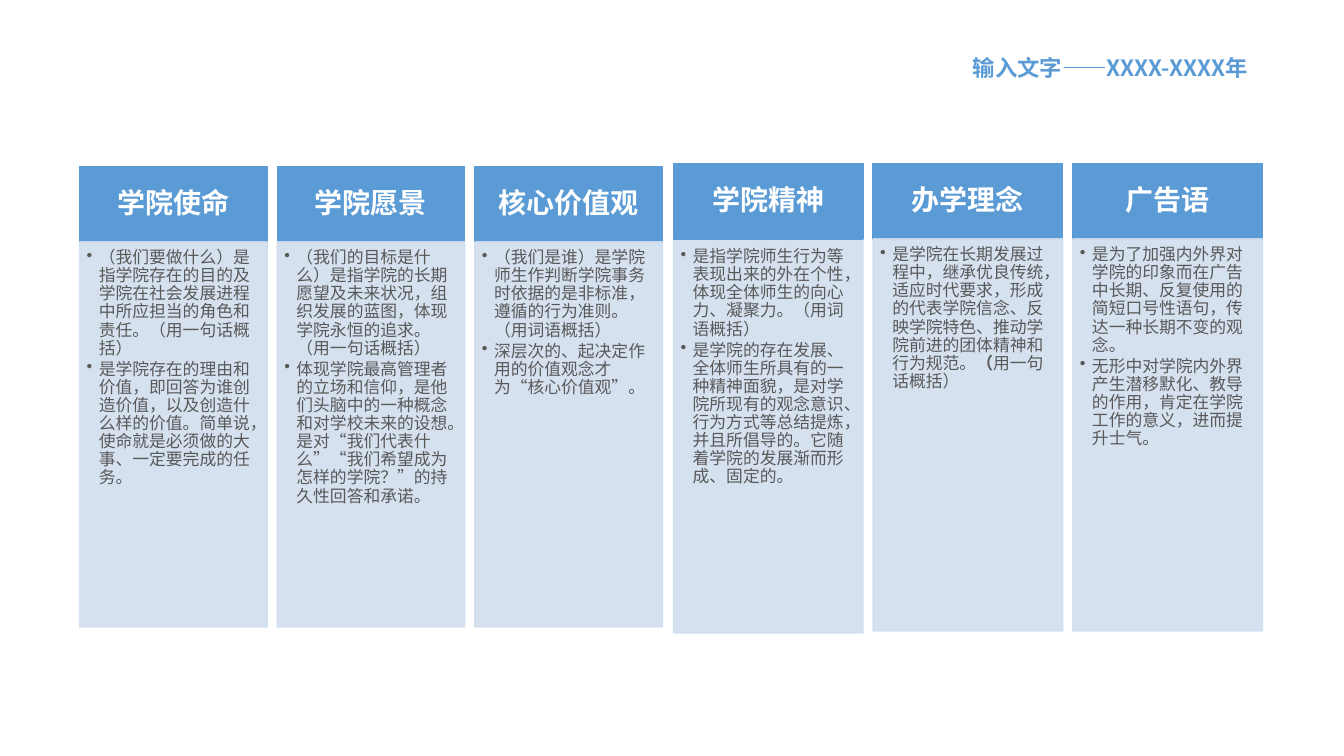
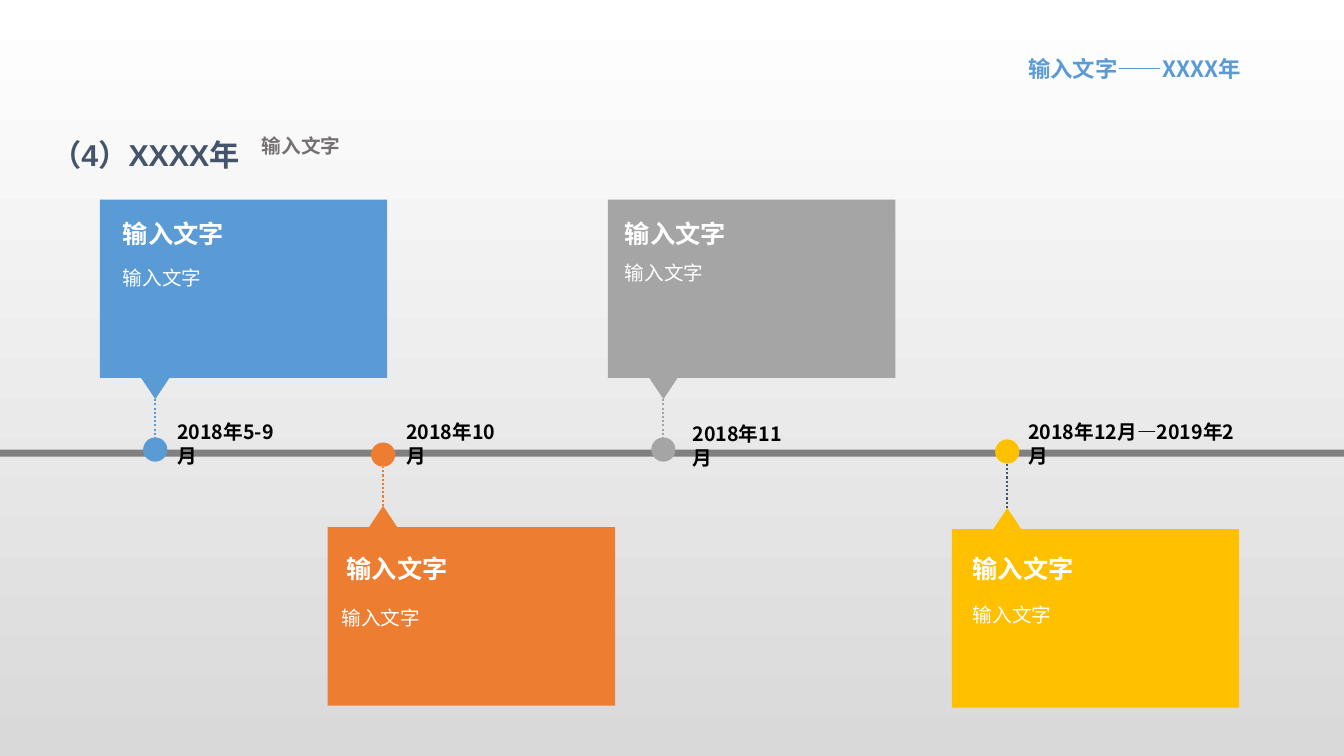
from lxml import etree
from pptx import Presentation
from pptx.dml.color import RGBColor
from pptx.enum import dml, shapes, text
from pptx.oxml import ns
from pptx.util import Inches, Pt

BLUE = RGBColor(0x5B, 0x9B, 0xD5)
PALE_BLUE = RGBColor(0xD2, 0xDE, 0xEF)
ORANGE = RGBColor(0xED, 0x7D, 0x31)
SILVER = RGBColor(0xA5, 0xA5, 0xA5)
GOLD = RGBColor(0xFF, 0xC0, 0x00)
NAVY = RGBColor(0x44, 0x54, 0x6A)
BODY_GRAY = RGBColor(0x59, 0x59, 0x59)
SUBTITLE_GRAY = RGBColor(0x76, 0x71, 0x71)
BAND_GRAY = RGBColor(0x80, 0x80, 0x80)
BACK_GRAY = RGBColor(0xD9, 0xD9, 0xD9)
WHITE = RGBColor(0xFF, 0xFF, 0xFF)
BLACK = RGBColor(0, 0, 0)
CJK = "Noto Sans CJK SC"


def write(box, *paragraphs, size, color, bold=False, font=CJK, spacing=None,
          align=text.PP_ALIGN.LEFT, anchor=text.MSO_ANCHOR.TOP, wrap=True,
          margins=(0.1, 0.05, 0.1, 0.05), bullets=False):
    """Fill a shape with text; pieces between ** marks are bold."""
    frame = box.text_frame
    frame.word_wrap = wrap
    frame.vertical_anchor = anchor
    (frame.margin_left, frame.margin_top,
     frame.margin_right, frame.margin_bottom) = map(Inches, margins)
    for number, content in enumerate(paragraphs):
        para = frame.add_paragraph() if number else frame.paragraphs[0]
        if bullets:
            props = para._p.get_or_add_pPr()
            props.set("marL", str(Inches(0.12)))
            props.set("indent", str(Inches(-0.12)))
            props.set("hangingPunct", "1")
            etree.SubElement(props, ns.qn("a:buChar")).set("char", "•")
            para.space_after = Pt(2)
        para.alignment = align
        if spacing:
            para.line_spacing = spacing
        for index, piece in enumerate(content.split("**")):
            span = para.add_run()
            span.text = piece
            span.font.size = Pt(size)
            span.font.bold = bold or index % 2 == 1
            span.font.color.rgb = color
            span.font.name = font
            run_props = span._r.get_or_add_rPr()
            run_props.set("lang", "zh-CN")
            etree.SubElement(run_props, ns.qn("a:ea")).set("typeface", CJK)


def paint(shape, color, line=False, alpha=None):
    shape.shadow.inherit = False
    shape.fill.solid()
    shape.fill.fore_color.rgb = color
    if line:
        shape.line.color.rgb = color
        shape.line.width = Pt(1)
    else:
        shape.line.fill.background()
    if alpha:
        for tone in shape._element.spPr.iter(ns.qn("a:srgbClr")):
            etree.SubElement(tone, ns.qn("a:alpha")).set("val", str(alpha * 1000))


deck = Presentation()
deck.slide_width, deck.slide_height = Inches(13.33), Inches(7.5)
blank = deck.slide_layouts[6]
columns_page, timeline_page = [deck.slides.add_slide(blank) for _ in range(2)]

# Shared corner label
for page, label, left, top, width in [
    (columns_page, "输入文字——XXXX-XXXX年", 9.55, 0.49, 3.13),
    (timeline_page, "输入文字——XXXX年", 10.1, 0.5, 2.41),
]:
    box = page.shapes.add_textbox(Inches(left), Inches(top), Inches(width), Inches(0.37))
    write(box, label, size=16, color=BLUE, bold=True, wrap=False)

# Slide 1: two groups of three columns
column_groups = [
    (0.79, 1.96, 1.86, 1.65, 3.82, [
        ("学院使命", 2.4, [
            "（我们要做什么）是指学院存在的目的及学院在社会发展进程中所应担当的角色和责任。（用一句话概括）",
            "是学院存在的理由和价值，即回答为谁创造价值，以及创造什么样的价值。简单说，使命就是必须做的大事、一定要完成的任务。",
        ]),
        ("学院愿景", 2.4, [
            "（我们的目标是什么）是指学院的长期愿望及未来状况，组织发展的蓝图，体现学院永恒的追求。（用一句话概括）",
            "体现学院最高管理者的立场和信仰，是他们头脑中的一种概念和对学校未来的设想。"
            "是对“我们代表什么”“我们希望成为怎样的学院？”的持久性回答和承诺。",
        ]),
        ("核心价值观", 2.4, [
            "（我们是谁）是学院师生作判断学院事务时依据的是非标准，遵循的行为准则。（用词语概括）",
            "深层次的、起决定作用的价值观念才为“核心价值观”。",
        ]),
    ]),
    (6.68, 1.98, 1.88, 1.62, 3.89, [
        ("学院精神", 2.39, [
            "是指学院师生行为等表现出来的外在个性，体现全体师生的向心力、凝聚力。（用词语概括）",
            "是学院的存在发展、全体师生所具有的一种精神面貌，是对学院所现有的观念意识、行为方式等总结提炼，"
            "并且所倡导的。它随着学院的发展渐而形成、固定的。",
        ]),
        ("办学理念", 2.37, [
            "是学院在长期发展过程中，继承优良传统，适应时代要求，形成的代表学院信念、反映学院特色、"
            "推动学院前进的团体精神和行为规范。**（**用一句话概括）",
        ]),
        ("广告语", 2.37, [
            "是为了加强内外界对学院的印象而在广告中长期、反复使用的简短口号性语句，传达一种长期不变的观念。",
            "无形中对学院内外界产生潜移默化、教导的作用，肯定在学院工作的意义，进而提升士气。",
        ]),
    ]),
]
for first_left, step, width, head_top, body_height, columns in column_groups:
    for index, (heading, body_top, points) in enumerate(columns):
        left = Inches(first_left + index * step)
        head = columns_page.shapes.add_shape(
            shapes.MSO_SHAPE.RECTANGLE, left, Inches(head_top), Inches(width), Inches(0.75))
        paint(head, BLUE, line=True)
        write(head, heading, size=20, color=WHITE, bold=True, spacing=0.9,
              align=text.PP_ALIGN.CENTER, anchor=text.MSO_ANCHOR.MIDDLE,
              margins=(0.16, 0.09, 0.16, 0.09))
        body = columns_page.shapes.add_shape(
            shapes.MSO_SHAPE.RECTANGLE, left, Inches(body_top), Inches(width), Inches(body_height))
        paint(body, PALE_BLUE, line=True, alpha=90)
        write(body, *points, size=12, color=BODY_GRAY, spacing=0.9,
              margins=(0.07, 0.07, 0.09, 0.1), bullets=True)

# Slide 2: timeline
back = timeline_page.background.fill
back.gradient()
back.gradient_angle = 270
for stop, color in zip(back.gradient_stops, (WHITE, BACK_GRAY)):
    stop.color.rgb = color

title = timeline_page.shapes.add_textbox(Inches(0.41), Inches(0.98), Inches(2.25), Inches(0.78))
write(title, "（4）XXXX年", size=21.6, color=NAVY, bold=True, font="Arial",
      spacing=1.7, anchor=text.MSO_ANCHOR.BOTTOM)
subtitle = timeline_page.shapes.add_textbox(Inches(2.5), Inches(1.16), Inches(10.36), Inches(0.45))
write(subtitle, "输入文字", size=14, color=SUBTITLE_GRAY, bold=True, spacing=1.5)
band = timeline_page.shapes.add_shape(
    shapes.MSO_SHAPE.RECTANGLE, 0, Inches(4.46), deck.slide_width, Inches(0.07))
paint(band, BAND_GRAY)

DOT = 0.24
CARD_WIDTH, CARD_HEIGHT, TIP_REACH = 2.85, 1.77, 1.98
TIP_OFFSET, TIP_HALF = 0.55, 0.14
# colour, line colour, card left, far edge, direction to the band, dot top,
# heading place, body place and width, date, date place and width
events = [
    (BLUE, BLUE, 0.99, 1.98, 1, 4.34, (1.12, 2.12), (1.12, 2.52, 2.63),
     "2018年5-9月", (1.66, 4.12, 1.3)),
    (ORANGE, ORANGE, 3.25, 7, -1, 4.39, (3.34, 5.44), (3.29, 5.89, 2.9),
     "2018年10月", (3.93, 4.12, 1.18)),
    (SILVER, SILVER, 6.03, 1.98, 1, 4.34, (6.1, 2.12), (6.1, 2.47, 2.89),
     "2018年11月", (6.77, 4.14, 1.14)),
    (GOLD, NAVY, 9.44, 7.02, -1, 4.36, (9.55, 5.44), (9.55, 5.86, 2.63),
     "2018年12月—2019年2月", (10.1, 4.12, 2.29)),
]
for (color, line_color, left, far, direction, dot_top,
     heading_place, body_place, date, date_place) in events:
    near = far + direction * CARD_HEIGHT
    tip_x, tip_y = left + TIP_OFFSET, far + direction * TIP_REACH
    right = left + CARD_WIDTH

    dot = timeline_page.shapes.add_shape(
        shapes.MSO_SHAPE.OVAL, Inches(tip_x - DOT / 2), Inches(dot_top), Inches(DOT), Inches(DOT))
    paint(dot, color)

    outline = [(right, far), (right, near), (tip_x + TIP_HALF, near), (tip_x, tip_y),
               (tip_x - TIP_HALF, near), (left, near)]
    builder = timeline_page.shapes.build_freeform(Inches(left), Inches(far))
    builder.add_line_segments([(Inches(x), Inches(y)) for x, y in outline], close=True)
    paint(builder.convert_to_shape(), color)

    dot_edge = dot_top if direction > 0 else dot_top + DOT
    stem = timeline_page.shapes.add_connector(
        shapes.MSO_CONNECTOR.STRAIGHT,
        Inches(tip_x), Inches(tip_y), Inches(tip_x), Inches(dot_edge))
    stem.line.color.rgb = line_color
    stem.line.width = Pt(1.5)
    stem.line.dash_style = dml.MSO_LINE.ROUND_DOT
    etree.SubElement(stem._element.spPr, ns.qn("a:effectLst"))

    for label, (x, y, width), height, style in [
        ("输入文字", body_place, 0.41, dict(size=14, color=WHITE, spacing=1.3)),
        ("输入文字", (*heading_place, 1.2), 0.4,
         dict(size=18, color=WHITE, bold=True, font="Quicksand", wrap=False)),
        (date, date_place, 0.34, dict(size=14, color=BLACK, bold=True)),
    ]:
        box = timeline_page.shapes.add_textbox(
            Inches(x), Inches(y), Inches(width), Inches(height))
        write(box, label, **style)

deck.save("out.pptx")
